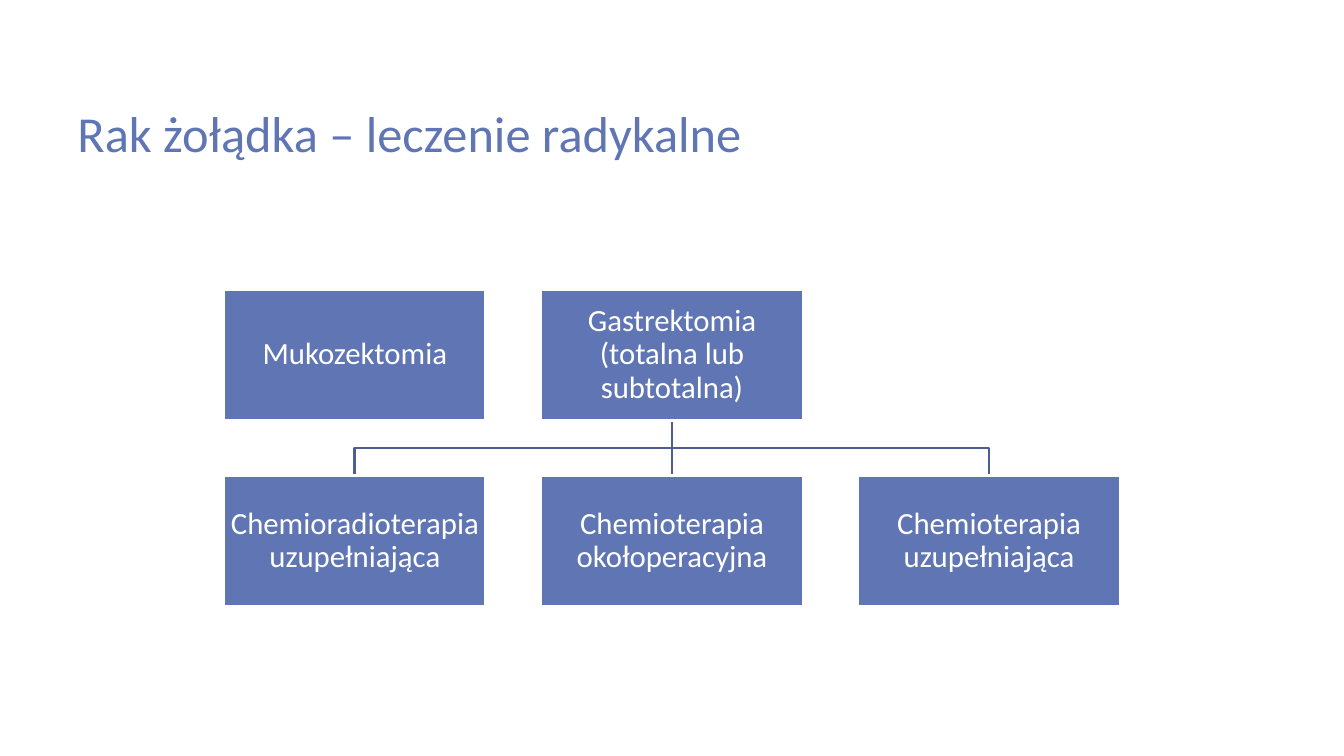
from lxml import etree
from pptx import Presentation
from pptx import util as u
from pptx.dml.color import RGBColor
from pptx.enum import shapes, text
from pptx.oxml.ns import qn

COLORS = {"blue": "6076B4", "line": "4D5E90", "white": "FFFFFF"}
FONT = "Calibri"
LEFT, TOP = 2.22, 2.87
BOX_W, BOX_H = 2.6, 1.3
COL_STEP, ROW_STEP = 3.145, 1.85
SURGERY = ["Mukozektomia", "Gastrektomia (totalna lub subtotalna)"]
ADJUNCTS = [
    "Chemioradioterapia uzupełniająca",
    "Chemioterapia okołoperacyjna",
    "Chemioterapia uzupełniająca",
]


def rgb(name):
    return RGBColor.from_string(COLORS[name])


def style_line(sp, color):
    sp.line.color.rgb = rgb(color)
    sp.line.width = u.Pt(2)


def write(sp, words, size, color):
    tf = sp.text_frame
    tf.word_wrap = True
    tf.text = words
    p = tf.paragraphs[0]
    font = p.runs[0].font
    font.name, font.size = FONT, u.Pt(size)
    font.color.rgb = rgb(color)
    return tf, p


def add_title(s, words):
    sp = s.shapes.add_textbox(u.Inches(0.67), u.Inches(0.41), u.Inches(9.49), u.Inches(1.25))
    tf, p = write(sp, words, 36, "blue")
    tf.vertical_anchor = text.MSO_ANCHOR.BOTTOM


def add_box(s, col, row, words):
    sp = s.shapes.add_shape(
        shapes.MSO_SHAPE.RECTANGLE,
        u.Inches(LEFT + col * COL_STEP), u.Inches(TOP + row * ROW_STEP),
        u.Inches(BOX_W), u.Inches(BOX_H),
    )
    sp.shadow.inherit = False
    sp.fill.solid()
    sp.fill.fore_color.rgb = rgb("blue")
    style_line(sp, "white")
    tf, p = write(sp, words, 22, "white")
    tf.vertical_anchor = text.MSO_ANCHOR.MIDDLE
    tf.margin_left = tf.margin_right = tf.margin_top = tf.margin_bottom = u.Inches(0.02)
    p.alignment = text.PP_ALIGN.CENTER
    p.line_spacing = 0.9
    return sp


def add_branch(s, parent, child):
    x0, y0 = parent.left + parent.width // 2, parent.top + parent.height
    x1, y1 = child.left + child.width // 2, child.top
    if x0 == x1:
        sp = s.shapes.add_connector(shapes.MSO_CONNECTOR.STRAIGHT, x0, y0, x1, y1)
        sp.begin_connect(parent, 2)
        sp.end_connect(child, 0)
        etree.SubElement(sp.element.spPr, qn("a:effectLst"))
    else:
        mid = (y0 + y1) // 2
        fb = s.shapes.build_freeform(x0, y0)
        fb.add_line_segments([(x0, mid), (x1, mid), (x1, y1)], close=False)
        sp = fb.convert_to_shape()
        sp.shadow.inherit = False
        sp.fill.background()
    style_line(sp, "line")
    return sp


def main():
    prs = Presentation()
    prs.slide_width, prs.slide_height = u.Inches(13.33), u.Inches(7.5)
    s = prs.slides.add_slide(prs.slide_layouts[6])
    add_title(s, "Rak żołądka – leczenie radykalne")
    surgery = [add_box(s, col, 0, words) for col, words in enumerate(SURGERY)]
    adjuncts = [add_box(s, col, 1, words) for col, words in enumerate(ADJUNCTS)]
    for child in adjuncts:
        branch = add_branch(s, surgery[1], child)
        surgery[0].element.addprevious(branch.element)
    prs.save("out.pptx")


if __name__ == "__main__":
    main()
